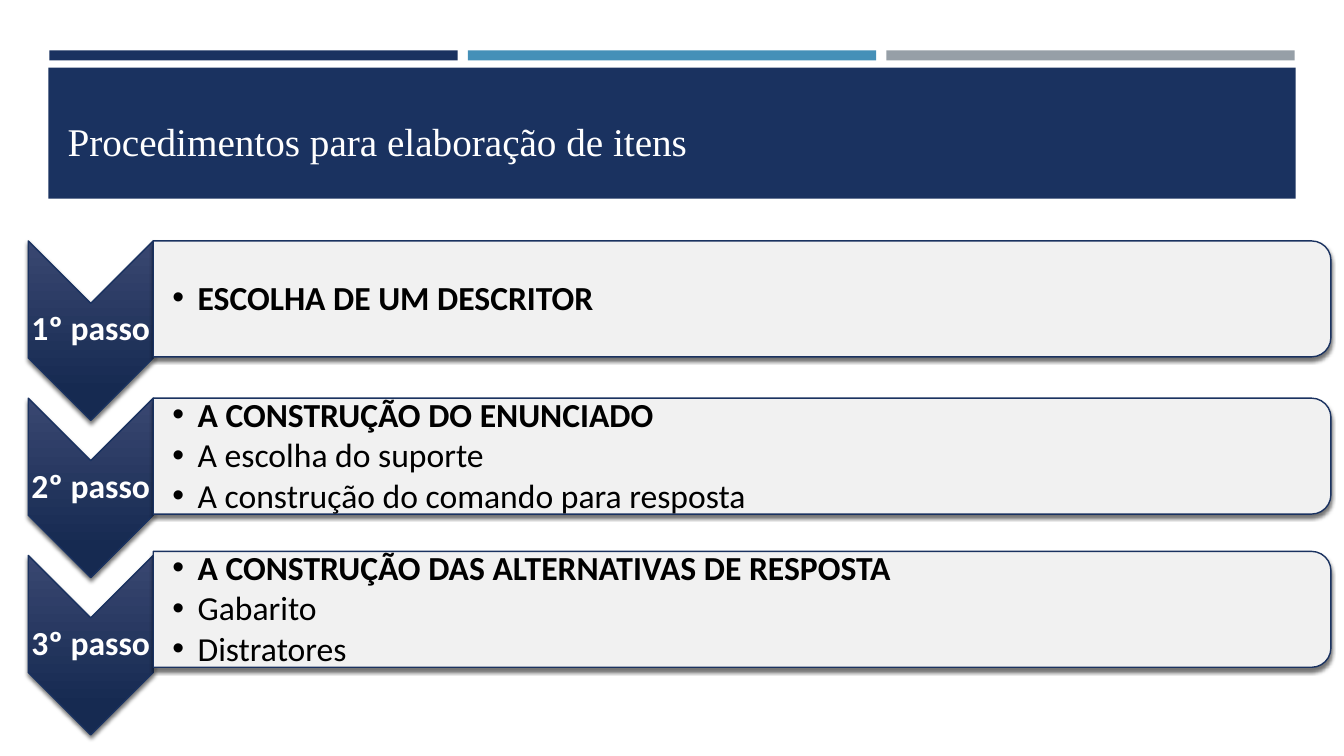
from dataclasses import dataclass

from lxml import etree
from pptx import Presentation
from pptx.dml import color
from pptx.enum import shapes, text
from pptx.oxml import ns
from pptx.util import Inches, Pt


@dataclass(frozen=True)
class Theme:
    navy: str = "1A3260"
    blue: str = "4590B8"
    grey: str = "969FA7"
    chevron_top: str = "394771"
    chevron_bottom: str = "162A51"
    panel: str = "F1F1F1"
    white: str = "FFFFFF"
    black: str = "000000"
    title_font: str = "Times New Roman"
    body_font: str = "Calibri"
    title_size: int = 28
    body_size: int = 24


THEME = Theme()
TITLE = "Procedimentos para elaboração de itens"
STEP_TOP, STEP_PITCH = 2.39, 1.56
CHEVRON_LEFT, CHEVRON_WIDTH, CHEVRON_HEIGHT = 0.28, 1.24, 1.78
PANEL_LEFT, PANEL_WIDTH, PANEL_HEIGHT = 1.52, 11.68, 1.15
# Step label, vertical offset of its panel, panel lines (the first is a heading)
STEPS = [
    ("1º passo", 0, ["ESCOLHA DE UM DESCRITOR"]),
    ("2º passo", 0, ["A CONSTRUÇÃO DO ENUNCIADO", "A escolha do suporte",
                     "A construção do comando para resposta"]),
    ("3º passo", -0.04, ["A CONSTRUÇÃO DAS ALTERNATIVAS DE RESPOSTA",
                         "Gabarito", "Distratores"]),
]


def rgb(value):
    return color.RGBColor.from_string(value)


def place(shape, left, top, width, height):
    shape.left, shape.top = Inches(left), Inches(top)
    shape.width, shape.height = Inches(width), Inches(height)


def bring_to_front(slide, shape):
    slide.shapes._spTree.append(shape._element)


def add_bullet(paragraph):
    props = paragraph._p.get_or_add_pPr()
    props.set("marL", str(Inches(0.25)))
    props.set("indent", str(-Inches(0.25)))
    etree.SubElement(props, ns.qn("a:buFont"), typeface="Arial")
    etree.SubElement(props, ns.qn("a:buChar"), char="•")


def write(shape, lines, *, size, font, ink, bold_lines=0, align=text.PP_ALIGN.LEFT,
          insets=(0.02, 0.02), line_spacing=0.9, space_after=0, bullets=False):
    """Fill a text shape; the first bold_lines lines are bold."""
    frame = shape.text_frame
    frame.word_wrap = True
    frame.auto_size = text.MSO_AUTO_SIZE.NONE
    frame.vertical_anchor = text.MSO_ANCHOR.MIDDLE
    frame.margin_left, frame.margin_right = map(Inches, insets)
    frame.margin_top = frame.margin_bottom = Inches(0.02)
    for index, line in enumerate(lines):
        paragraph = frame.add_paragraph() if index else frame.paragraphs[0]
        paragraph.alignment = align
        paragraph.line_spacing = line_spacing
        paragraph.space_before = Pt(0)
        paragraph.space_after = Pt(space_after)
        if bullets:
            add_bullet(paragraph)
        run = paragraph.add_run()
        run.text = line
        run.font.name = font
        run.font.size = Pt(size)
        run.font.bold = index < bold_lines
        run.font.color.rgb = rgb(ink)


def add_bar(slide, left, top, width, height, fill):
    bar = slide.shapes.add_shape(shapes.MSO_SHAPE.RECTANGLE, Inches(left),
                                 Inches(top), Inches(width), Inches(height))
    bar.shadow.inherit = False
    bar.fill.solid()
    bar.fill.fore_color.rgb = rgb(fill)
    bar.line.fill.background()


def add_drop_shadow(shape):
    shape.shadow.inherit = False
    effects = shape._element.spPr.find(ns.qn("a:effectLst"))
    shadow = etree.SubElement(effects, ns.qn("a:outerShdw"), blurRad=str(Pt(3)),
                              dist=str(Pt(2)), dir="5400000", rotWithShape="0")
    shade = etree.SubElement(shadow, ns.qn("a:srgbClr"), val=THEME.black)
    etree.SubElement(shade, ns.qn("a:alpha"), val="55000")


def add_turned_shape(slide, preset, left, top, width, height):
    """Add a shape turned by 90 degrees that covers the given box once turned."""
    shift = (width - height) / 2
    shape = slide.shapes.add_shape(preset, Inches(left + shift), Inches(top - shift),
                                   Inches(height), Inches(width))
    shape.rotation = 90
    shape.line.color.rgb = rgb(THEME.navy)
    shape.line.width = Pt(1)
    add_drop_shadow(shape)
    return shape


def add_chevron(slide, top, label):
    chevron = add_turned_shape(slide, shapes.MSO_SHAPE.CHEVRON, CHEVRON_LEFT, top,
                               CHEVRON_WIDTH, CHEVRON_HEIGHT)
    chevron.fill.gradient()
    chevron.fill.gradient_angle = 270
    stops = zip(chevron.fill.gradient_stops,
                [(0, THEME.chevron_top), (0.84, THEME.chevron_bottom)])
    for stop, (position, tone) in stops:
        stop.position = position
        stop.color.rgb = rgb(tone)
    chevron._element.spPr.find(ns.qn("a:gradFill")).set("rotWithShape", "0")

    caption = slide.shapes.add_textbox(Inches(CHEVRON_LEFT), Inches(top + 0.62),
                                       Inches(CHEVRON_WIDTH), Inches(0.53))
    write(caption, [label], size=THEME.body_size, font=THEME.body_font,
          ink=THEME.white, bold_lines=1, align=text.PP_ALIGN.CENTER)


def add_panel(slide, placeholder, top, lines):
    panel = add_turned_shape(slide, shapes.MSO_SHAPE.ROUND_2_SAME_RECTANGLE,
                             PANEL_LEFT, top, PANEL_WIDTH, PANEL_HEIGHT)
    panel.fill.solid()
    panel.fill.fore_color.rgb = rgb(THEME.panel)

    place(placeholder, PANEL_LEFT, top + 0.06, 11.62, 1.04)
    bring_to_front(slide, placeholder)
    write(placeholder, lines, size=THEME.body_size, font=THEME.body_font,
          ink=THEME.black, bold_lines=1, insets=(0.19, 0.02), space_after=3,
          bullets=True)


def add_header(slide):
    for column, fill in enumerate([THEME.navy, THEME.blue, THEME.grey]):
        add_bar(slide, 0.49 + column * 4.15, 0.5, 4.05, 0.1, fill)
    add_bar(slide, 0.48, 0.67, 12.37, 1.3, THEME.navy)
    title = slide.shapes.title
    place(title, 0.57, 1, 12.06, 0.8)
    bring_to_front(slide, title)
    write(title, [TITLE], size=THEME.title_size, font=THEME.title_font,
          ink=THEME.white, insets=(0.1, 0.1), line_spacing=1)


def main():
    deck = Presentation()
    deck.slide_width, deck.slide_height = Inches(13.33), Inches(7.5)
    slide = deck.slides.add_slide(deck.slide_layouts.get_by_name("Comparison"))
    _, *lists, spare = list(slide.placeholders)
    spare._element.getparent().remove(spare._element)

    add_header(slide)
    for index, (label, panel_offset, lines) in enumerate(STEPS):
        top = STEP_TOP + index * STEP_PITCH
        add_chevron(slide, top, label)
        add_panel(slide, lists[index], top + panel_offset, lines)
    deck.save("out.pptx")


if __name__ == "__main__":
    main()
